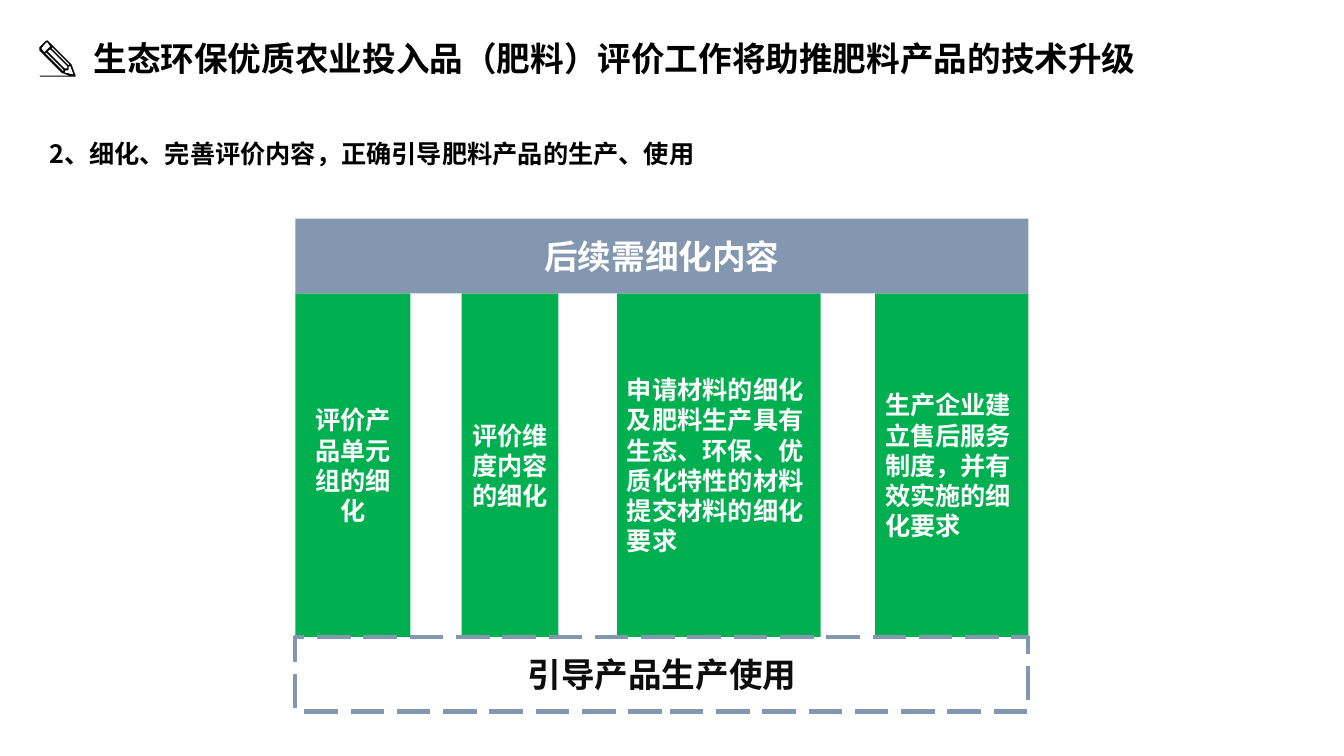
from pptx import Presentation
from pptx.dml.color import RGBColor
from pptx.enum.dml import MSO_LINE
from pptx.enum.shapes import MSO_SHAPE
from pptx.enum.text import MSO_ANCHOR, MSO_AUTO_SIZE, PP_ALIGN
from pptx.oxml.ns import qn
from pptx.util import Pt
from lxml import etree

RECTANGLE = MSO_SHAPE.RECTANGLE
LONG_DASH = MSO_LINE.LONG_DASH
MIDDLE = MSO_ANCHOR.MIDDLE
GROW = MSO_AUTO_SIZE.SHAPE_TO_FIT_TEXT
LEFT, CENTER = PP_ALIGN.LEFT, PP_ALIGN.CENTER

PX = 9144  # 100 px to the inch
FONT = "Noto Sans CJK SC"
COLORS = {
    "black": "000000",
    "ink": "0D0D0D",
    "white": "FFFFFF",
    "green": "00B050",
    "slate": "8497B0",
}

FRAME_LEFT, FRAME_WIDTH = 293, 727
HEADER_TOP, COLUMN_TOP, FOOTER_TOP = 217, 291, 632
BAR_HEIGHT = COLUMN_TOP - HEADER_TOP

# left, width, alignment, text
COLUMNS = [
    (293, 114, CENTER, "评价产品单元组的细化"),
    (458, 96, CENTER, "评价维度内容的细化"),
    (612, 202, LEFT, "申请材料的细化及肥料生产具有生态、环保、优质化特性的材料提交材料的细化要求"),
    (868, 152, LEFT, "生产企业建立售后服务制度，并有效实施的细化要求"),
]

# outline first, then the openings inside it
PENCIL = [
    [(75, 76), (75, 75), (71, 64), (48, 41), (47, 40), (45, 41), (39, 47),
     (39, 50), (62, 73), (63, 73), (69, 75), (40, 75), (39, 75), (40, 76)],
    [(73, 74), (64, 72), (65, 70), (67, 70), (68, 69), (68, 66), (70, 66)],
    [(52, 47), (69, 64), (68, 65), (51, 48)],
    [(50, 49), (67, 66), (67, 68), (64, 68), (47, 51)],
    [(40, 48), (41, 48), (46, 42), (47, 42), (50, 46), (44, 52), (41, 48)],
    [(46, 52), (63, 69), (63, 71), (45, 53)],
]


def rgb(name):
    return RGBColor.from_string(COLORS[name])


def write(shape, text, size=18, color="black", align=LEFT):
    frame = shape.text_frame
    frame.word_wrap = True
    para = frame.paragraphs[0]
    para.alignment = align
    para.line_spacing = Pt(size * 1.2)
    span = para.add_run()
    span.text = text
    span.font.size = Pt(size)
    span.font.bold = True
    span.font.name = FONT
    span.font.color.rgb = rgb(color)
    east_asian = etree.SubElement(span.font._element, qn("a:ea"))
    east_asian.set("typeface", FONT)


class Painter:
    def __init__(self, page):
        self.shapes = page.shapes

    def label(self, left, top, width, height, text, **style):
        box = self.shapes.add_textbox(*(PX * n for n in (left, top, width, height)))
        write(box, text, **style)
        box.text_frame.auto_size = GROW

    def block(self, left, top, width, height, text, fill=None, dashed=None, **style):
        box = self.shapes.add_shape(
            RECTANGLE, *(PX * n for n in (left, top, width, height)))
        box.shadow.inherit = False
        if fill:
            box.fill.solid()
            box.fill.fore_color.rgb = rgb(fill)
        else:
            box.fill.background()
        if dashed:
            box.line.color.rgb = rgb(dashed)
            box.line.width = Pt(3)
            box.line.dash_style = LONG_DASH
        else:
            box.line.fill.background()
        box.text_frame.vertical_anchor = MIDDLE
        write(box, text, **style)

    def outline(self, contours, fill):
        first, *openings = contours
        builder = self.shapes.build_freeform(*first[0], scale=PX)
        builder.add_line_segments(first[1:], close=True)
        for points in openings:
            builder.move_to(*points[0])
            builder.add_line_segments(points[1:], close=True)
        shape = builder.convert_to_shape()
        shape.shadow.inherit = False
        shape.fill.solid()
        shape.fill.fore_color.rgb = rgb(fill)
        shape.line.fill.background()


def main():
    deck = Presentation()
    deck.slide_width, deck.slide_height = 1333 * PX, 750 * PX
    painter = Painter(deck.slides.add_slide(deck.slide_layouts[6]))

    painter.label(83, 33, 1066, 50,
                  "生态环保优质农业投入品（肥料）评价工作将助推肥料产品的技术升级", size=24)
    painter.outline(PENCIL, "black")
    painter.label(39, 132, 817, 40, "2、细化、完善评价内容，正确引导肥料产品的生产、使用")

    for left, width, align, text in COLUMNS:
        painter.block(left, COLUMN_TOP, width, FOOTER_TOP - COLUMN_TOP, text,
                      fill="green", color="white", align=align)
    painter.block(FRAME_LEFT, HEADER_TOP, FRAME_WIDTH, BAR_HEIGHT, "后续需细化内容",
                  fill="slate", size=24, color="white", align=CENTER)
    painter.block(FRAME_LEFT, FOOTER_TOP, FRAME_WIDTH, BAR_HEIGHT, "引导产品生产使用",
                  dashed="slate", size=24, color="ink", align=CENTER)

    deck.save("out.pptx")


if __name__ == "__main__":
    main()
